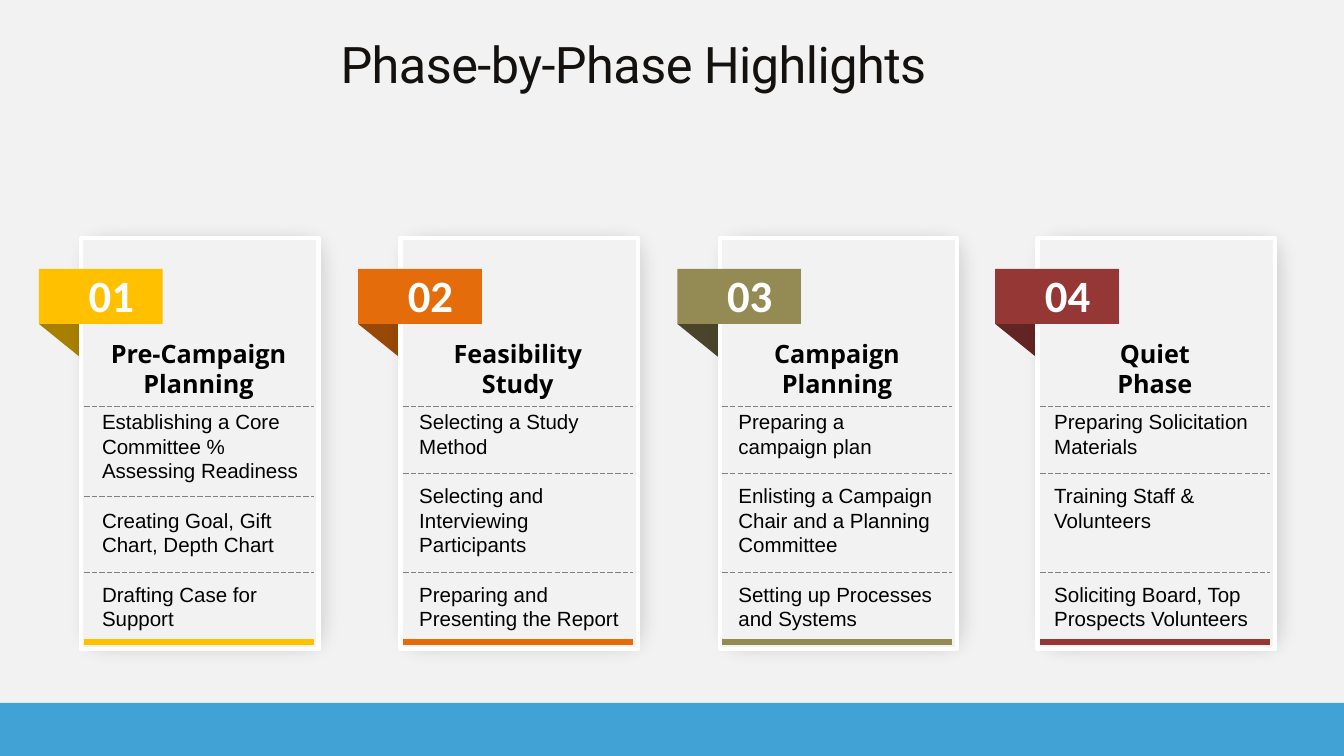
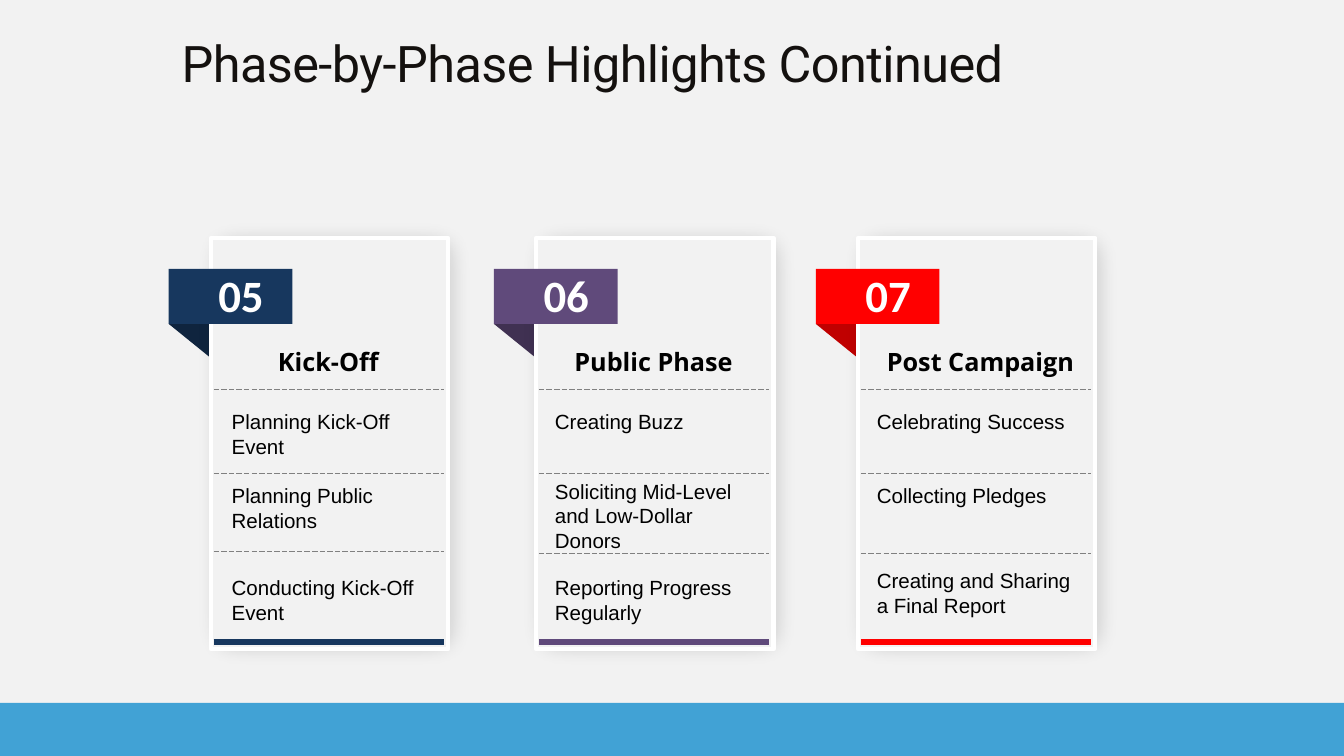
from dataclasses import dataclass

from lxml import etree
from pptx import Presentation
from pptx.dml.color import RGBColor
from pptx.enum import dml, shapes, text
from pptx.oxml import ns
from pptx.util import Inches, Pt

COLORS = {
    "background": "F2F2F2", "band": "41A2D5", "title": "14110F",
    "black": "000000", "white": "FFFFFF", "divider": "808080",
    "yellow": "FFC000", "yellow fold": "A88000",
    "orange": "E46C0A", "orange fold": "984807",
    "olive": "948A54", "olive fold": "4A452A",
    "maroon": "953735", "maroon fold": "632523",
    "navy": "17375E", "navy fold": "0F243E",
    "purple": "604A7B", "purple fold": "403152",
    "red": "FF0000", "red fold": "C00000",
}
LINE_RATIO = 1.2
CARD_TOP = 3.54
DIVIDER_OFFSET = 0.67
DIVIDER_WIDTH = 3.42


@dataclass
class Phase:
    number: str
    left: float
    color: str
    heading: str
    items: list
    gaps: list
    dividers: list
    heading_top: float = 4.98
    heading_width: float = 2.91
    body_offset: float = 0.81
    body_width: float = 3.17


SLIDES = [
    ("Phase-by-Phase Highlights", (4.4, 0.31, 10.05, 1.01), [
        Phase("01", 0.58, "yellow", "Pre-Campaign Planning",
              ["Establishing a Core Committee % Assessing Readiness",
               "Creating Goal, Gift Chart, Depth Chart",
               "Drafting Case for Support"],
              [22, 22], [6.04, 7.38, 8.52], body_offset=0.84),
        Phase("02", 5.33, "orange", "Feasibility Study",
              ["Selecting a Study Method",
               "Selecting and Interviewing Participants",
               "Preparing and Presenting the Report"],
              [22, 22], [6.04, 7.04, 8.52], body_width=3.29),
        Phase("03", 10.08, "olive", "Campaign Planning",
              ["Preparing a campaign plan",
               "Enlisting a Campaign Chair and a Planning Committee",
               "Setting up Processes and Systems"],
              [22, 22], [6.04, 7.04, 8.52]),
        Phase("04", 14.81, "maroon", "Quiet\nPhase",
              ["Preparing Solicitation Materials",
               "Training Staff & Volunteers",
               "Soliciting Board, Top Prospects Volunteers"],
              [22, 44], [6.04, 7.04, 8.52], body_offset=0.78),
    ]),
    ("Phase-by-Phase Highlights Continued", (2.38, 0.29, 12.87, 1.01), [
        Phase("05", 2.51, "navy", "Kick-Off",
              ["Planning Kick-Off Event",
               "Planning Public Relations",
               "Conducting Kick-Off Event"],
              [22, 38], [5.79, 7.04, 8.21], 5.11, body_offset=0.84),
        Phase("06", 7.35, "purple", "Public Phase",
              ["Creating Buzz",
               "Soliciting Mid-Level and Low-Dollar Donors",
               "Reporting Progress Regularly"],
              [40, 20], [5.79, 7.04, 8.24], 5.11, body_width=3.29),
        Phase("07", 12.14, "red", "Post Campaign",
              ["Celebrating Success",
               "Collecting Pledges",
               "Creating and Sharing a Final Report"],
              [44, 54], [5.79, 7.04, 8.23], 5.11, heading_width=3.06),
    ]),
]


def rgb(name):
    return RGBColor.from_string(COLORS[name])


class Deck:
    def __init__(self):
        self.presentation = Presentation()
        self.presentation.slide_width = Inches(20)
        self.presentation.slide_height = Inches(11.25)
        fill = self.presentation.slide_master.background.fill
        fill.solid()
        fill.fore_color.rgb = rgb("background")
        self.slide = None

    def add_slide(self, title, box):
        self.slide = self.presentation.slides.add_slide(self.presentation.slide_layouts[5])
        shape = self.slide.shapes.title
        shape.left, shape.top, shape.width, shape.height = map(Inches, box)
        frame = shape.text_frame
        frame.word_wrap = True
        frame.auto_size = text.MSO_AUTO_SIZE.NONE
        frame.vertical_anchor = text.MSO_ANCHOR.TOP
        frame.margin_left = frame.margin_right = frame.margin_top = frame.margin_bottom = 0
        frame.text = title
        paragraph = frame.paragraphs[0]
        paragraph.alignment = text.PP_ALIGN.CENTER
        paragraph.line_spacing = Pt(78)
        self.format_font(paragraph.font, "Roboto", 54, "title")
        paragraph.runs[0].font._element.set("spc", "-60")
        self.block((0, 10.46, 20, 0.81), "band")

    def format_font(self, font, name, size, color, bold=False):
        font.name = name
        font.size = Pt(size)
        font.bold = bold
        font.color.rgb = rgb(color)

    def block(self, box, color, kind=shapes.MSO_SHAPE.RECTANGLE, border=None):
        shape = self.slide.shapes.add_shape(kind, *map(Inches, box))
        shape.shadow.inherit = False
        shape.fill.solid()
        shape.fill.fore_color.rgb = rgb(color)
        if border:
            shape.line.color.rgb = rgb(border)
            shape.line.width = Pt(4.5)
        else:
            shape.line.fill.background()
        return shape

    def soft_shadow(self, box):
        shape = self.block(box, "black")
        properties = shape._element.spPr
        color = properties.find(".//" + ns.qn("a:srgbClr"))
        etree.SubElement(color, ns.qn("a:alpha"), val="15000")
        effects = properties.find(ns.qn("a:effectLst"))
        etree.SubElement(effects, ns.qn("a:softEdge"), rad="317500")

    def line(self, left, top, width, color, weight, dash=None):
        connector = self.slide.shapes.add_connector(
            shapes.MSO_CONNECTOR.STRAIGHT,
            Inches(left), Inches(top), Inches(left + width), Inches(top))
        connector.line.color.rgb = rgb(color)
        connector.line.width = Pt(weight)
        if dash:
            connector.line.dash_style = dash
        etree.SubElement(connector._element.spPr, ns.qn("a:effectLst"))

    def text_box(self, box, lines, font, size, color="black", bold=False,
                 align=text.PP_ALIGN.LEFT, gaps=(), fixed_spacing=True):
        frame = self.slide.shapes.add_textbox(*map(Inches, box)).text_frame
        frame.word_wrap = True
        frame.text = "\n".join(lines)
        for paragraph in frame.paragraphs:
            paragraph.alignment = align
            if fixed_spacing:
                paragraph.line_spacing = Pt(size * LINE_RATIO)
            self.format_font(paragraph.font, font, size, color, bold)
        for paragraph, gap in zip(frame.paragraphs[1:], gaps):
            paragraph.space_before = Pt(gap * LINE_RATIO)

    def card(self, phase):
        left = phase.left
        fold = self.block((left, 4.82, 0.63, 0.51), phase.color + " fold",
                          shapes.MSO_SHAPE.RIGHT_TRIANGLE)
        fold.rotation = 180
        self.soft_shadow((left + 0.22, 3.09, 4.48, 7.03))
        self.block((left + 0.63, CARD_TOP, 3.53, 6.12), "background", border="white")
        self.block((left, 4, 1.84, 0.82), phase.color)
        self.line(left + DIVIDER_OFFSET, 9.55, DIVIDER_WIDTH, phase.color, 6)
        self.text_box((left + 0.64, 3.94, 1.15, 0.91), [phase.number],
                      "Calibri", 48, "white", True, fixed_spacing=False)
        self.text_box((left + 0.92, phase.heading_top, phase.heading_width, 1.01),
                      [phase.heading], "Open Sans", 27, bold=True,
                      align=text.PP_ALIGN.CENTER)
        self.text_box((left + phase.body_offset, 6.04, phase.body_width, 3.43),
                      phase.items, "Arial", 22, gaps=phase.gaps)
        for top in phase.dividers:
            self.line(left + DIVIDER_OFFSET, top, DIVIDER_WIDTH, "divider", 0.75,
                      dml.MSO_LINE.LONG_DASH)


def main():
    deck = Deck()
    for title, box, phases in SLIDES:
        deck.add_slide(title, box)
        for phase in phases:
            deck.card(phase)
    deck.presentation.save("out.pptx")


if __name__ == "__main__":
    main()
